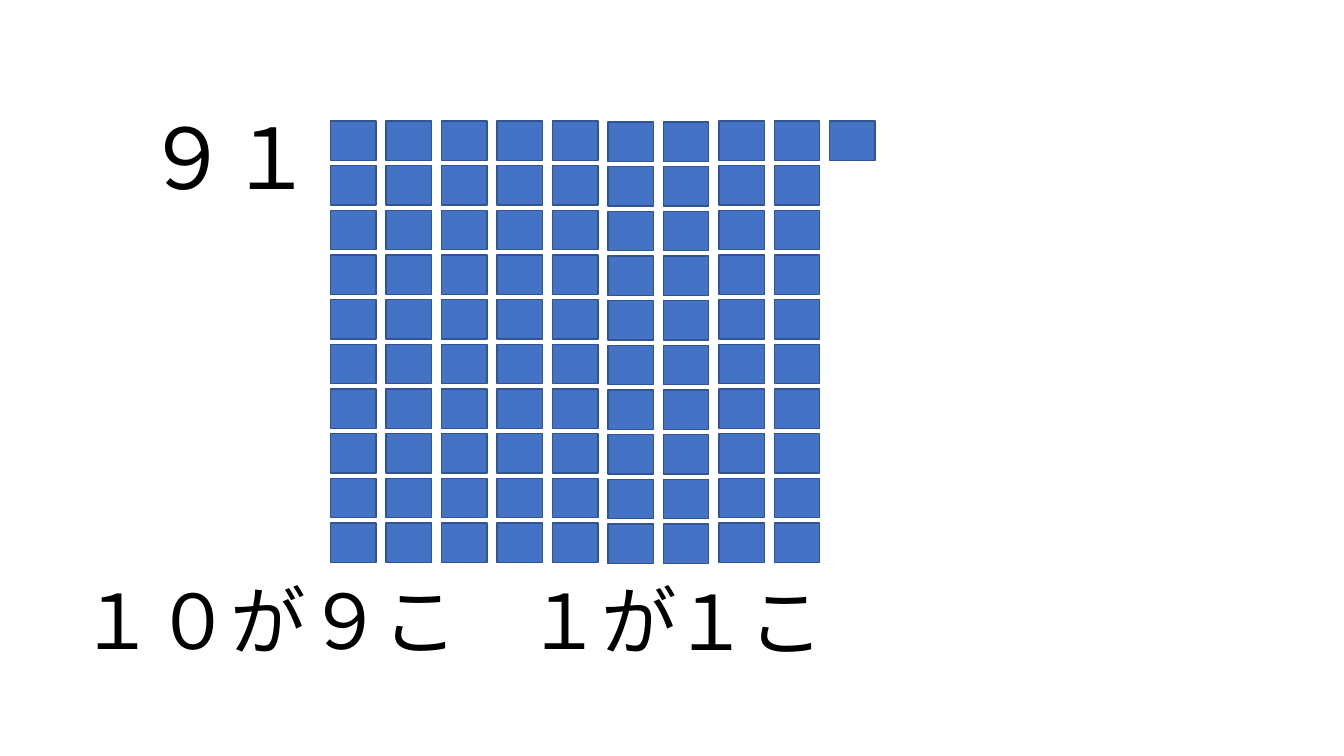
from lxml import etree
from pptx import Presentation
from pptx.dml.color import RGBColor
from pptx.enum.shapes import MSO_SHAPE
from pptx.enum.text import MSO_AUTO_SIZE
from pptx.oxml.ns import qn
from pptx.util import Inches, Pt

RECT = MSO_SHAPE.RECTANGLE
GROW = MSO_AUTO_SIZE.SHAPE_TO_FIT_TEXT

FONT = "Noto Sans CJK JP"
BLACK = RGBColor(0x00, 0x00, 0x00)
BLUE = RGBColor(0x44, 0x72, 0xC4)
DARK_BLUE = RGBColor(0x32, 0x54, 0x91)

# Counting blocks: nine columns of ten, and one single block
TENS, ROWS = 9, 10
GRID_LEFT, GRID_TOP = 3.28, 1.2
COL_PITCH, ROW_PITCH = 0.55, 3.99 / 9
BLOCK_W, BLOCK_H = 0.45, 0.39
LOWERED_COLS = (5, 6)  # these columns sit slightly lower

# Text, size, left, top, width, height
LABELS = [
    ("９１", 60, 1.34, 1.0, 2.87, 1.11),
    ("１０が", 54, 0.69, 5.64, 3.1, 1.01),
    ("９こ", 54, 2.95, 5.64, 1.88, 1.01),
    ("１が", 54, 5.12, 5.64, 1.88, 1.01),
    ("１こ", 54, 6.58, 5.65, 2.28, 1.01),
]


def add_label(slide, text, size, left, top, width, height):
    s = slide.shapes.add_textbox(Inches(left), Inches(top),
                                 Inches(width), Inches(height))
    tf = s.text_frame
    tf.word_wrap = True
    tf.auto_size = GROW
    r = tf.paragraphs[0].add_run()
    r.text = text
    r.font.size = Pt(size)
    r.font.name = FONT
    r.font.color.rgb = BLACK
    # Full-width characters take the East Asian typeface
    ea = etree.SubElement(r.font._element, qn("a:ea"))
    ea.set("typeface", FONT)


def add_block(shapes, col, row):
    top = GRID_TOP + row * ROW_PITCH + (0.01 if col in LOWERED_COLS else 0)
    s = shapes.add_shape(RECT, Inches(GRID_LEFT + col * COL_PITCH), Inches(top),
                         Inches(BLOCK_W), Inches(BLOCK_H))
    s.shadow.inherit = False
    s.fill.solid()
    s.fill.fore_color.rgb = BLUE
    s.line.color.rgb = DARK_BLUE
    s.line.width = Pt(1)


def add_ten(slide, col):
    group = slide.shapes.add_group_shape()
    for row in range(ROWS):
        add_block(group.shapes, col, row)


def main():
    prs = Presentation()
    prs.slide_width = Inches(13.33)
    prs.slide_height = Inches(7.5)
    slide = prs.slides.add_slide(prs.slide_layouts[6])

    # Number and its reading in tens and ones
    for label in LABELS:
        add_label(slide, *label)

    # Tens, then the single one
    for col in range(TENS):
        add_ten(slide, col)
    add_block(slide.shapes, TENS, 0)

    prs.save("out.pptx")


if __name__ == "__main__":
    main()
